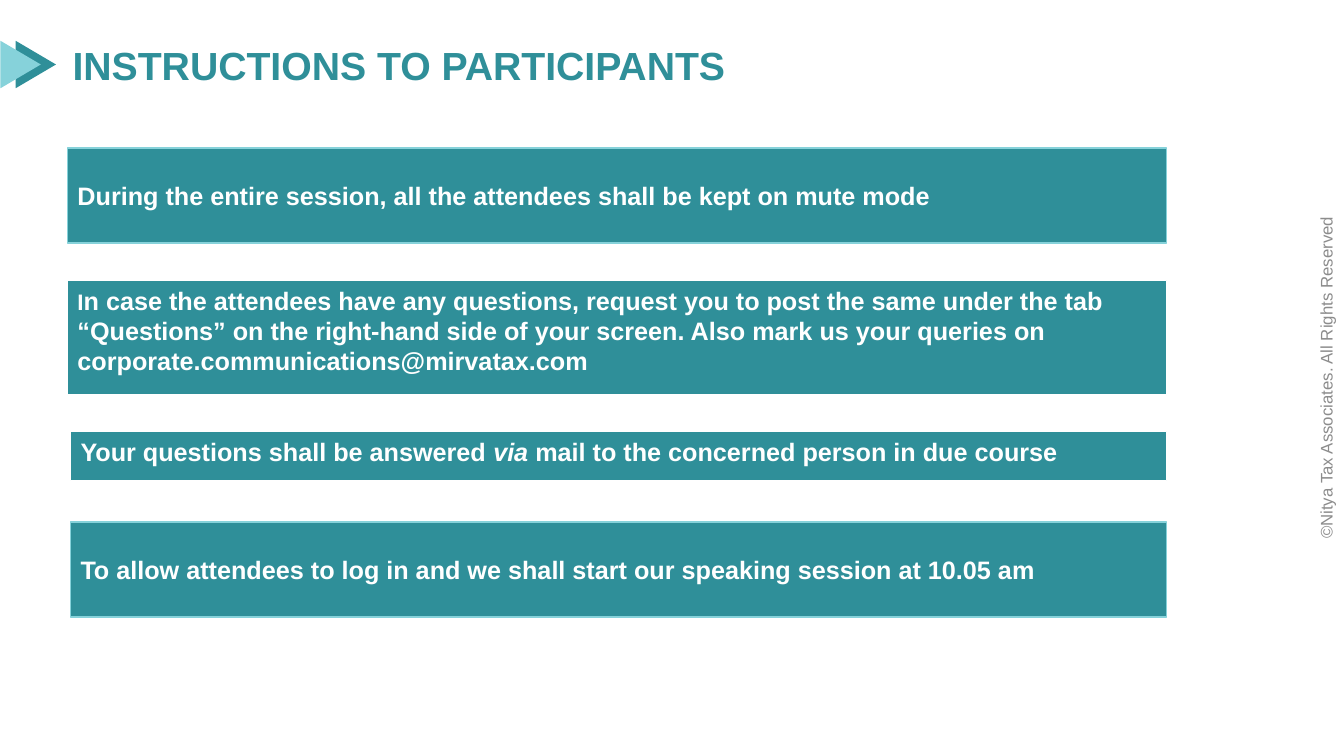
from pptx import Presentation
from pptx.dml.color import RGBColor
from pptx.enum.shapes import MSO_SHAPE as Preset
from pptx.enum.text import MSO_ANCHOR as Anchor, PP_ALIGN as Align
from pptx.util import Inches, Pt

TEAL, AQUA, WHITE, GREY = "2F8F99", "86D2DA", "FFFFFF", "8C8C8C"

deck = Presentation()
deck.slide_width, deck.slide_height = Inches(13.33), Inches(7.5)
slide = deck.slides.add_slide(deck.slide_layouts[5])
column, row = deck.slide_width / 100, deck.slide_height / 100


def area(left, top, width, height):
    return [round(n * unit) for n, unit in zip((left, top, width, height), (column, row) * 2)]


def write(frame, runs, color, anchor=Anchor.TOP, align=Align.LEFT, bold=True):
    frame.word_wrap = True
    frame.vertical_anchor = anchor
    paragraph = frame.paragraphs[0]
    paragraph.alignment = align
    for words, size, italic in runs:
        run = paragraph.add_run()
        run.text = words
        looks = {"name": "Arial", "size": Pt(size), "bold": bold, "italic": italic}
        for key, value in looks.items():
            setattr(run.font, key, value)
        run.font.color.rgb = RGBColor.from_string(color)


rights = slide.shapes.add_textbox(*area(81.77, 47.33, 33.76, 5.33))
rights.rotation = 270
write(rights.text_frame, [("©Nitya Tax Associates. All Rights Reserved", 12, False)],
      GREY, Anchor.MIDDLE, Align.CENTER, False)

for left, color in ((0.9, TEAL), (-0.23, AQUA)):
    arrow = slide.shapes.add_shape(Preset.ISOSCELES_TRIANGLE, *area(left, 5.87, 3.53, 5.33))
    arrow.rotation = 90
    arrow.shadow.inherit = False
    arrow.fill.solid()
    arrow.fill.fore_color.rgb = RGBColor.from_string(color)
    arrow.line.fill.background()

heading = slide.shapes.title
for side, length in zip(("left", "top", "width", "height"), area(4.65, 4.8, 82.75, 8)):
    setattr(heading, side, length)
write(heading.text_frame, [("INSTRUCTIONS TO PARTICIPANTS", 28, False)], TEAL)

instructions = [
    (5.03, 19.6, 12.53, AQUA, Anchor.MIDDLE, [
        ("During the entire session, all the attendees shall be kept on mute mode", 18, False)]),
    (5.03, 37.07, 15.2, WHITE, Anchor.TOP, [
        ("I", 16, False),
        ("n case the attendees have any questions, request you to post the same under the tab "
         "“Questions” on the right-hand side of your screen. Also mark us your queries on "
         "corporate.communications@mirvatax.com", 18, False)]),
    (5.25, 57.07, 6.53, WHITE, Anchor.TOP, [
        ("Your questions shall be answered ", 18, False),
        ("via ", 18, True),
        ("mail to the concerned person in due course", 18, False)]),
    (5.25, 69.07, 12.53, AQUA, Anchor.MIDDLE, [
        ("To allow attendees to log in and we shall start our speaking session at 10.05 am", 18, False)]),
]
right_edge = 86.8
for left, top, height, border, anchor, runs in instructions:
    panel = slide.shapes.add_shape(Preset.RECTANGLE, *area(left, top, right_edge - left, height))
    panel.shadow.inherit = False
    panel.fill.solid()
    panel.fill.fore_color.rgb = RGBColor.from_string(TEAL)
    panel.line.color.rgb = RGBColor.from_string(border)
    panel.line.width = Pt(1)
    write(panel.text_frame, runs, WHITE, anchor)

deck.save("out.pptx")
